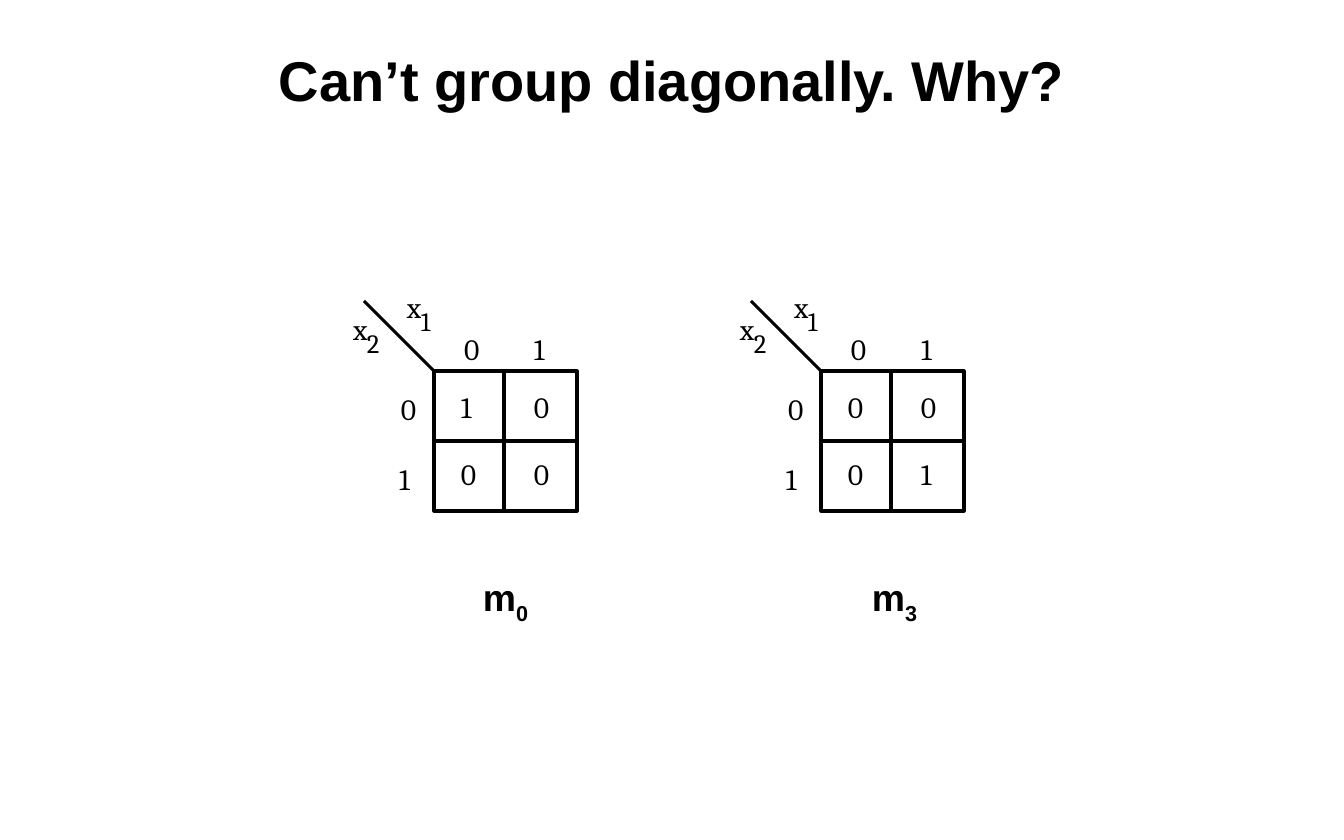
from lxml.etree import SubElement
from pptx import Presentation
from pptx.dml.color import RGBColor
from pptx.enum.shapes import MSO_CONNECTOR, MSO_SHAPE
from pptx.enum.text import MSO_ANCHOR, MSO_AUTO_SIZE, PP_ALIGN
from pptx.oxml.ns import qn
from pptx.util import Emu, Pt

BLACK = RGBColor(0x00, 0x00, 0x00)
WHITE = RGBColor(0xFF, 0xFF, 0xFF)
PX = 914400 / 112


def px(*lengths):
    return [Emu(round(n * PX)) for n in lengths]


def write(p, text, size=19, font="Cambria", bold=False, baseline=None):
    r = p.add_run()
    r.text = text
    r.font.size = Pt(size)
    r.font.name = font
    r.font.bold = bold
    r.font.color.rgb = BLACK
    if baseline:
        r._r.get_or_add_rPr().set("baseline", str(baseline))


prs = Presentation()
prs.slide_width, prs.slide_height = px(1344, 840)
slide = prs.slides.add_slide(prs.slide_layouts[5])

# Title
title = slide.shapes.title
title.left, title.top, title.width, title.height = px(0, 37, 1344, 84)
tf = title.text_frame
tf.vertical_anchor = MSO_ANCHOR.MIDDLE
p = tf.paragraphs[0]
p.alignment = PP_ALIGN.CENTER
write(p, "Can’t group diagonally. Why?", size=36, font="Arial", bold=True)

# Karnaugh maps: grid left, caption left, minterm number, cell values by row
W, H, SIDE = 143, 140, 70
TOP = 371
MAPS = [
    (434, 411, "0", ["10", "00"]),
    (821, 800, "3", ["00", "01"]),
]

for left, caption_left, minterm, rows in MAPS:
    group = slide.shapes.add_group_shape().shapes

    # Grid with its dividers and the diagonal between the variables
    grid = group.add_shape(MSO_SHAPE.RECTANGLE, *px(left, TOP, W, H))
    grid.shadow.inherit = False
    grid.fill.solid()
    grid.fill.fore_color.rgb = WHITE
    grid.line.color.rgb = BLACK
    grid.line.width = Pt(2)
    for x1, y1, x2, y2 in [
        (W, SIDE, 0, SIDE),
        (SIDE, H, SIDE, 0),
        (-SIDE, -SIDE, 0, 0),
    ]:
        line = group.add_connector(
            MSO_CONNECTOR.STRAIGHT,
            *px(left + x1, TOP + y1, left + x2, TOP + y2))
        line.line.color.rgb = BLACK
        line.line.width = Pt(2)
        SubElement(line._element.spPr, qn("a:effectLst"))

    # Variables, headings and cell values, placed from the grid's corner
    labels = []
    for number, x, y in [("2", -81, -60), ("1", -27, -82)]:
        labels += [("x", x, y, 22, 19), (number, x + 14, y + 16, 20, 17)]
    for i, digit in enumerate("01"):
        labels.append((digit, -33 - 2 * i, 20 + SIDE * i, 22, 19))
        labels.append((digit, 30 + SIDE * i, -40, 22, 19))
    for i, row in enumerate(rows):
        for j, value in enumerate(row):
            labels.append((value, 27 + 73 * j, 18 + 67 * i, 15, 19))

    for text, x, y, width, size in labels:
        height = 36 if size == 19 else 32
        box = group.add_textbox(*px(left + x, TOP + y, width, height))
        tf = box.text_frame
        tf.margin_left = tf.margin_right = tf.margin_top = tf.margin_bottom = 0
        tf.word_wrap = False
        tf.auto_size = MSO_AUTO_SIZE.SHAPE_TO_FIT_TEXT
        write(tf.paragraphs[0], text, size=size)

    # Minterm caption
    tf = slide.shapes.add_textbox(*px(caption_left, 569, 189, 57)).text_frame
    tf.word_wrap = True
    tf.auto_size = MSO_AUTO_SIZE.SHAPE_TO_FIT_TEXT
    p = tf.paragraphs[0]
    p.alignment = PP_ALIGN.CENTER
    write(p, "m", size=24, font="Arial", bold=True)
    write(p, minterm, size=24, font="Arial", bold=True, baseline=-25000)

prs.save("out.pptx")
